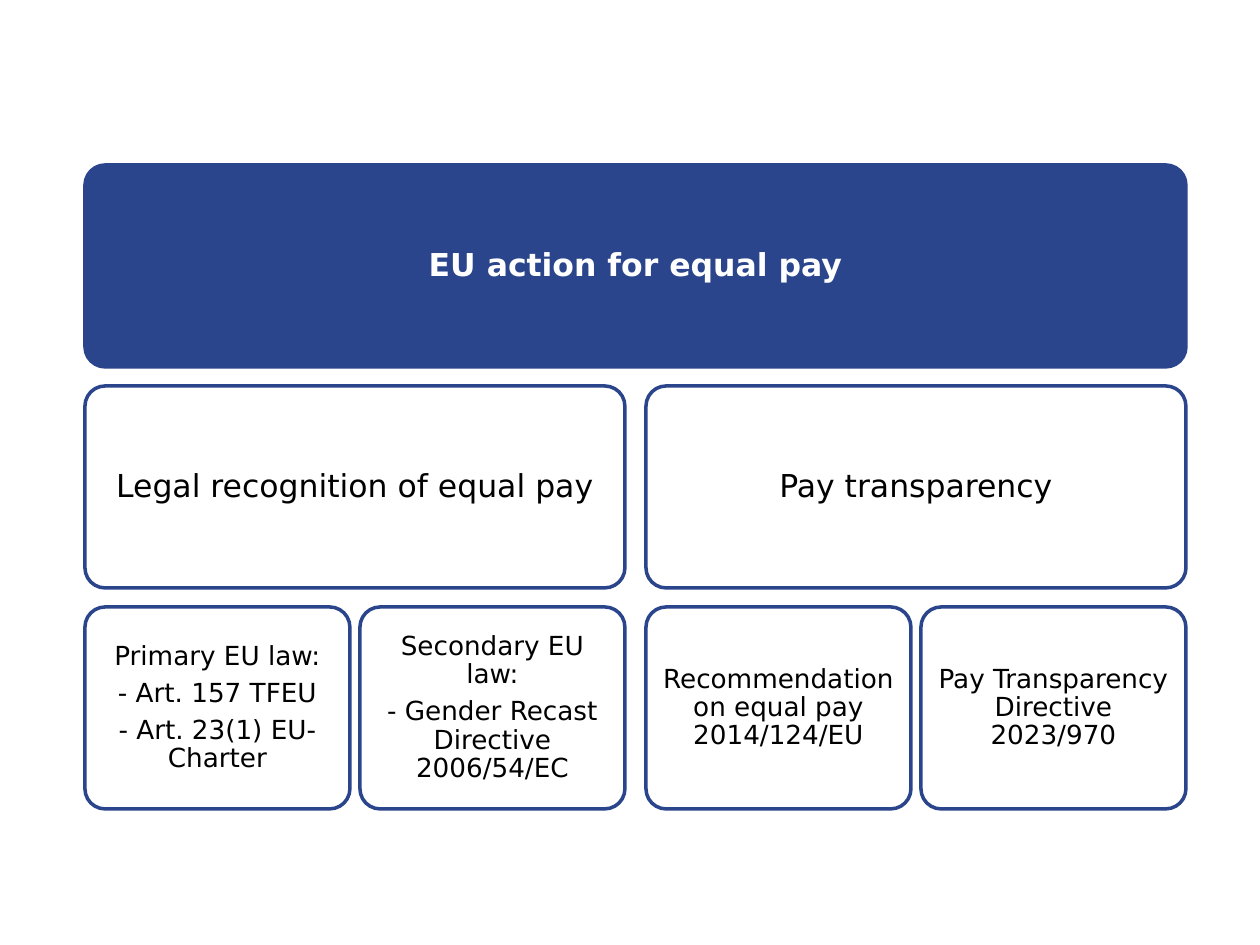
from pptx import Presentation
from pptx.dml.color import RGBColor
from pptx.enum.shapes import MSO_SHAPE as Shape
from pptx.enum.text import MSO_ANCHOR as Anchor, PP_ALIGN as Align
from pptx.util import Emu, Pt

BLUE = RGBColor(0x2A, 0x45, 0x8B)
WHITE = RGBColor(0xFF, 0xFF, 0xFF)
BLACK = RGBColor(0x00, 0x00, 0x00)

LEFT, TOP = 85, 165
BOX_WIDTH, BOX_HEIGHT = 265, 202
BOX_GAP, BRANCH_GAP, ROW_PITCH = 10, 21, 221
BRANCH_WIDTH = 2 * BOX_WIDTH + BOX_GAP

TITLE = "EU action for equal pay"
BRANCHES = [
    ("Legal recognition of equal pay", [
        "Primary EU law:\n- Art. 157 TFEU\n- Art. 23(1) EU-Charter",
        "Secondary EU law:\n- Gender Recast Directive 2006/54/EC",
    ]),
    ("Pay transparency", [
        "Recommendation on equal pay 2014/124/EU",
        "Pay Transparency Directive 2023/970",
    ]),
]


def px(length):
    return Emu(round(length * 914400 / 126))


class HierarchySlide:
    """Draws the boxes of a hierarchy on one slide in a shared style."""

    font_name = "DejaVu Sans"

    def __init__(self, slide):
        self.slide = slide

    def box(self, left, row, width, text, size=18, inset=9,
            fill=WHITE, color=BLACK, bold=False):
        shape = self.slide.shapes.add_shape(
            Shape.ROUNDED_RECTANGLE, px(left), px(TOP + row * ROW_PITCH),
            px(width), px(BOX_HEIGHT))
        shape.adjustments[0] = 0.1
        shape.shadow.inherit = False
        shape.fill.solid()
        shape.fill.fore_color.rgb = fill
        shape.line.color.rgb = BLUE
        shape.line.width = Pt(2)
        frame = shape.text_frame
        frame.word_wrap = True
        frame.vertical_anchor = Anchor.MIDDLE
        frame.margin_left = frame.margin_right = px(inset)
        frame.margin_top = frame.margin_bottom = px(inset)
        frame.text = text
        for paragraph in frame.paragraphs:
            paragraph.alignment = Align.CENTER
            paragraph.line_spacing = 0.9
            paragraph.space_after = Pt(round(size * 0.35))
            for run in paragraph.runs:
                run.font.name = self.font_name
                run.font.size = Pt(size)
                run.font.bold = bold
                run.font.color.rgb = color


def main():
    presentation = Presentation()
    presentation.slide_width = px(1260)
    presentation.slide_height = px(945)
    hierarchy = HierarchySlide(
        presentation.slides.add_slide(presentation.slide_layouts[6]))

    hierarchy.box(LEFT, 0, 2 * BRANCH_WIDTH + BRANCH_GAP, TITLE,
                  fill=BLUE, color=WHITE, bold=True)
    for branch_index, (heading, leaves) in enumerate(BRANCHES):
        branch_left = LEFT + branch_index * (BRANCH_WIDTH + BRANCH_GAP)
        hierarchy.box(branch_left, 1, BRANCH_WIDTH, heading)
        for leaf_index, leaf in enumerate(leaves):
            leaf_left = branch_left + leaf_index * (BOX_WIDTH + BOX_GAP)
            hierarchy.box(leaf_left, 2, BOX_WIDTH, leaf, size=15, inset=7)

    presentation.save("out.pptx")


if __name__ == "__main__":
    main()
